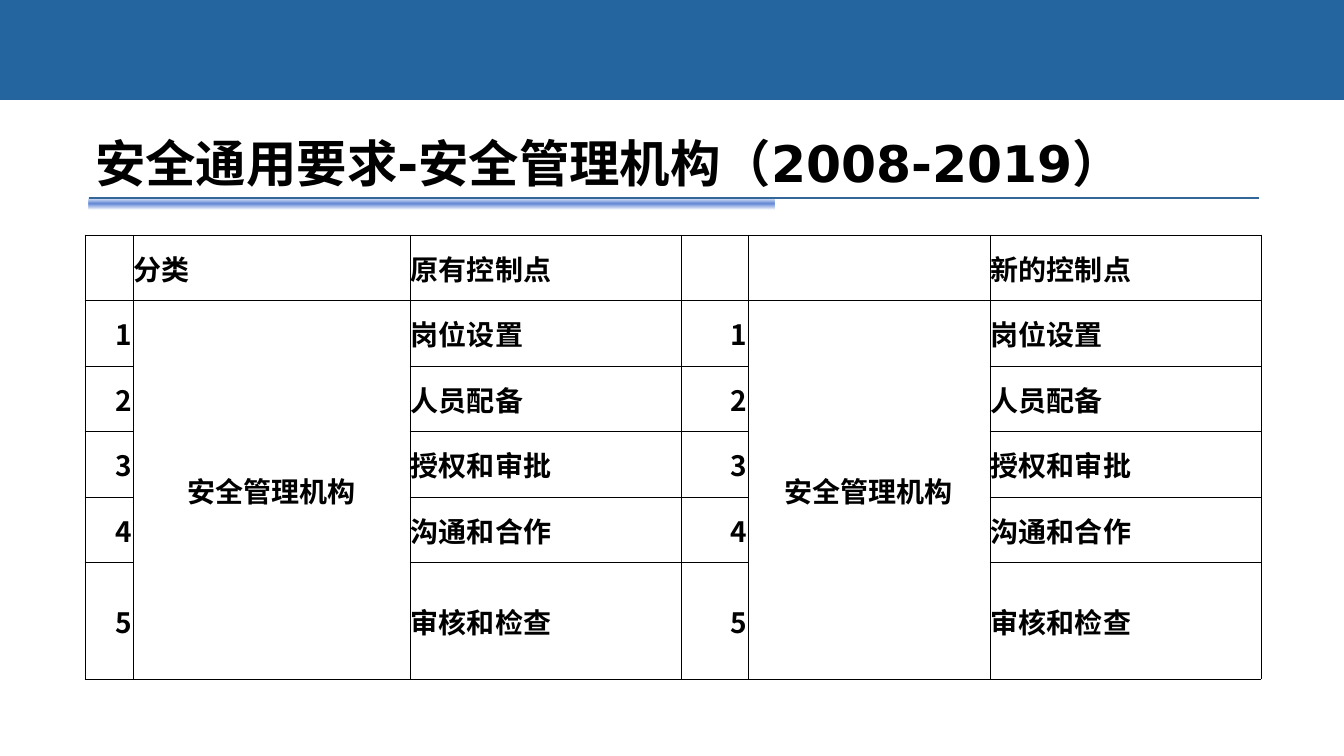
from lxml import etree
from pptx import Presentation
from pptx.dml.color import RGBColor
from pptx.enum.shapes import MSO_CONNECTOR, MSO_SHAPE
from pptx.enum.text import MSO_ANCHOR, MSO_AUTO_SIZE, PP_ALIGN
from pptx.oxml import parse_xml
from pptx.oxml.ns import nsdecls, qn
from pptx.util import Pt

LEFT, CENTER, RIGHT = PP_ALIGN.LEFT, PP_ALIGN.CENTER, PP_ALIGN.RIGHT
MIDDLE, BOTTOM = MSO_ANCHOR.MIDDLE, MSO_ANCHOR.BOTTOM
RECTANGLE, STRAIGHT = MSO_SHAPE.RECTANGLE, MSO_CONNECTOR.STRAIGHT
NO_AUTOFIT = MSO_AUTO_SIZE.NONE
TITLE_ONLY = 5

COLORS = {
    "text": "000000",
    "border": "000000",
    "banner": "25659F",
    "rule": "336699",
    "glow_edge": "5781D5",
    "glow_middle": "6387D6",
}
CJK_FONT = "Noto Sans CJK SC"
TITLE_FORMAT = {"name": "DejaVu Sans", "size": Pt(36), "bold": True}
CELL_FORMAT = {"name": CJK_FONT, "size": Pt(20), "bold": True}


def px(length):
    return round(length * 914400 / 100.8)


def color(name):
    return RGBColor.from_string(COLORS[name])


class SlideBuilder:
    """Draws styled elements on one slide, with lengths in px."""

    def __init__(self, deck):
        self.page = deck.slides.add_slide(deck.slide_layouts[TITLE_ONLY])

    def add_text(self, para, text, style, align=LEFT):
        para.alignment = align
        span = para.add_run()
        span.text = text
        for name, value in style.items():
            setattr(span.font, name, value)
        span.font.color.rgb = color("text")
        properties = span.font._element
        etree.SubElement(properties, qn("a:ea")).set("typeface", CJK_FONT)

    def title(self, text, left, top, width, height):
        box = self.page.shapes.title
        box.left, box.top, box.width, box.height = map(px, (left, top, width, height))
        layout = {
            "margin_left": px(10), "margin_right": px(10),
            "margin_top": 0, "margin_bottom": 0,
            "vertical_anchor": BOTTOM, "word_wrap": True, "auto_size": NO_AUTOFIT,
        }
        for name, value in layout.items():
            setattr(box.text_frame, name, value)
        self.add_text(box.text_frame.paragraphs[0], text, TITLE_FORMAT)

    def rectangle(self, left, top, width, height, fill):
        box = self.page.shapes.add_shape(RECTANGLE, *map(px, (left, top, width, height)))
        box.shadow.inherit = False
        box.fill.solid()
        box.fill.fore_color.rgb = color(fill)
        box.line.fill.background()
        return box

    def glow_bar(self, left, top, width, height):
        box = self.rectangle(left, top, width, height, "glow_middle")
        stops = "".join(
            f'<a:gs pos="{place * 1000}"><a:srgbClr val="{COLORS[name]}">'
            f'<a:alpha val="{opacity * 1000}"/></a:srgbClr></a:gs>'
            for place, name, opacity in (
                (0, "glow_edge", 0), (50, "glow_middle", 100), (100, "glow_edge", 0))
        )
        gradient = parse_xml(
            f'<a:gradFill {nsdecls("a")} rotWithShape="1"><a:gsLst>{stops}</a:gsLst>'
            '<a:lin ang="5400000" scaled="1"/></a:gradFill>')
        properties = box._element.spPr
        properties.replace(properties.find(qn("a:solidFill")), gradient)

    def rule(self, left, top, width):
        line = self.page.shapes.add_connector(
            STRAIGHT, *map(px, (left, top, left + width, top)))
        line.line.color.rgb = color("rule")
        line.line.width = Pt(0.75)
        etree.SubElement(line._element.spPr, qn("a:effectLst"))

    def cell(self, cell, text, align):
        layout = {
            "margin_left": px(1), "margin_right": px(1),
            "margin_top": px(1), "margin_bottom": 0, "vertical_anchor": MIDDLE,
        }
        for name, value in layout.items():
            setattr(cell, name, value)
        properties = cell._tc.get_or_add_tcPr()
        for side in ("lnL", "lnR", "lnT", "lnB"):
            properties.append(parse_xml(
                f'<a:{side} {nsdecls("a")} w="{Pt(0.5)}"><a:solidFill>'
                f'<a:srgbClr val="{COLORS["border"]}"/></a:solidFill></a:{side}>'))
        cell.fill.background()
        if text:
            self.add_text(cell.text_frame.paragraphs[0], text, CELL_FORMAT, align)

    def table(self, left, top, widths, heights, rows, aligns, merged_columns):
        frame = self.page.shapes.add_table(
            len(heights), len(widths),
            *map(px, (left, top, sum(widths), sum(heights))))
        table = frame.table
        table.first_row = table.horz_banding = False
        for column, width in zip(table.columns, widths):
            column.width = px(width)
        for row, height in zip(table.rows, heights):
            row.height = px(height)
        for row_index, texts in enumerate(rows):
            for column_index, text in enumerate(texts):
                align = aligns[column_index] if row_index else LEFT
                self.cell(table.cell(row_index, column_index), text, align)
        for column_index in merged_columns:
            table.cell(1, column_index).merge(table.cell(len(rows) - 1, column_index))


def main():
    deck = Presentation()
    deck.slide_width, deck.slide_height = px(1344), px(756)
    builder = SlideBuilder(deck)
    builder.glow_bar(89, 198, 685, 12)
    builder.rule(89, 198, 1170)
    builder.rectangle(0, 0, 1344, 100, "banner")
    builder.title("安全通用要求-安全管理机构（2008-2019）", 85, 59, 1176, 134)

    controls = ["岗位设置", "人员配备", "授权和审批", "沟通和合作", "审核和检查"]
    rows = [["", "分类", "原有控制点", "", "", "新的控制点"]]
    for number, control in enumerate(controls, 1):
        category = "安全管理机构" if number == 1 else ""
        rows.append([str(number), category, control] * 2)
    builder.table(
        85, 235, [48, 277, 271, 67, 242, 271], [65, 66, 65, 66, 65, 117],
        rows, [RIGHT, CENTER, LEFT] * 2, merged_columns=(1, 4))
    deck.save("out.pptx")


if __name__ == "__main__":
    main()
